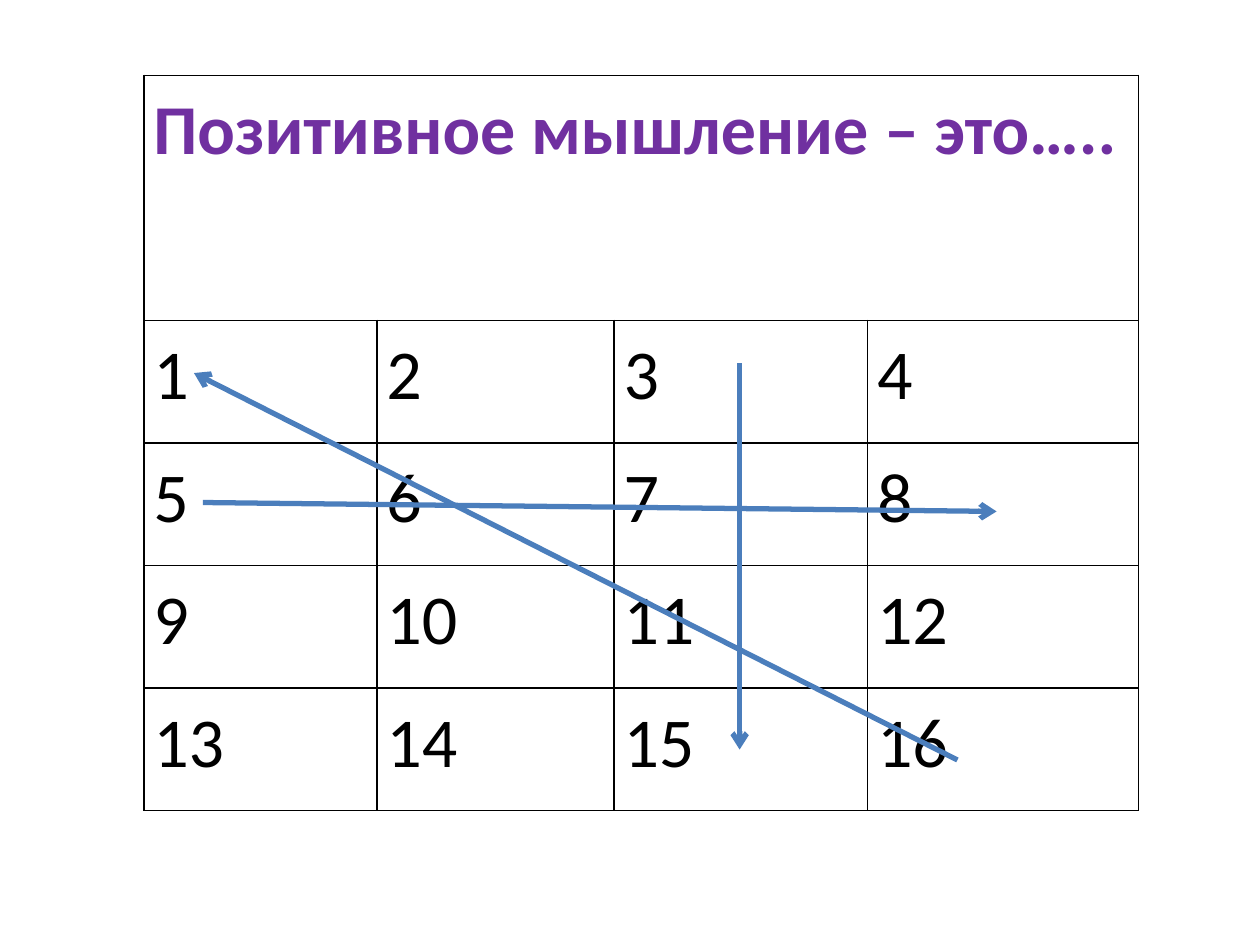
from lxml.etree import SubElement
from pptx import Presentation
from pptx.dml.color import RGBColor
from pptx.enum.shapes import MSO_CONNECTOR as Connector
from pptx.oxml.ns import qn
from pptx.util import Cm, Pt


def colour(value):
    return RGBColor.from_string(value)


class Board:
    font = "Calibri"
    text_size = Pt(40)
    ink, accent, paper, arrow_ink = "000000", "7030A0", "FFFFFF", "4B7EBC"
    cell_format = {
        "margin_left": Cm(0.19),
        "margin_right": Cm(0.19),
        "margin_top": 0,
        "margin_bottom": 0,
    }

    def __init__(self, slide):
        self.slide = slide

    def border(self, cell):
        properties = cell._tc.get_or_add_tcPr()
        for side in ("lnL", "lnR", "lnT", "lnB"):
            edge = SubElement(properties, qn(f"a:{side}"), w=str(Pt(1)))
            fill = SubElement(edge, qn("a:solidFill"))
            SubElement(fill, qn("a:srgbClr"), val=self.ink)

    def label(self, cell, text, ink, bold=False):
        for name, value in self.cell_format.items():
            setattr(cell, name, value)
        paragraph = cell.text_frame.paragraphs[0]
        paragraph.line_spacing = 1.15
        run = paragraph.add_run()
        run.text = text
        text_format = {"name": self.font, "size": self.text_size, "bold": bold}
        for name, value in text_format.items():
            setattr(run.font, name, value)
        run.font.color.rgb = colour(ink)

    def grid(self, title, left, top, widths, heights):
        frame = self.slide.shapes.add_table(
            len(heights), len(widths), Cm(left), Cm(top),
            Cm(sum(widths)), Cm(sum(heights)))
        table = frame.table
        table.first_row = table.horz_banding = False
        for column, width in zip(table.columns, widths):
            column.width = Cm(width)
        for row, height in zip(table.rows, heights):
            row.height = Cm(height)
        for cell in table.iter_cells():
            self.border(cell)
            cell.fill.solid()
            cell.fill.fore_color.rgb = colour(self.paper)
        heading = table.cell(0, 0)
        heading.merge(table.cell(0, len(widths) - 1))
        self.label(heading, title, self.accent, bold=True)
        numbered = list(table.iter_cells())[len(widths):]
        for number, cell in enumerate(numbered, 1):
            self.label(cell, str(number), self.ink)

    def arrow(self, start, end):
        connector = self.slide.shapes.add_connector(
            Connector.STRAIGHT, *map(Cm, start + end))
        connector.line.width = Pt(3)
        connector.line.color.rgb = colour(self.arrow_ink)
        properties = connector._element.spPr
        SubElement(properties.find(qn("a:ln")), qn("a:tailEnd"), type="arrow")
        SubElement(properties, qn("a:effectLst"))


def main():
    deck = Presentation()
    deck.slide_width, deck.slide_height = Cm(25.4), Cm(19.05)
    board = Board(deck.slides.add_slide(deck.slide_layouts[6]))
    board.grid("Позитивное мышление – это…..", 2.9, 1.52,
               [4.7, 4.78, 5.11, 5.46], [4.94] + [2.47] * 4)
    diagonal = (19.3, 15.32), (3.91, 7.52)
    across = (4.09, 10.13), (20.09, 10.31)
    down = (14.91, 7.32), (14.91, 15.11)
    for start, end in (diagonal, across, down):
        board.arrow(start, end)
    deck.save("out.pptx")


if __name__ == "__main__":
    main()
